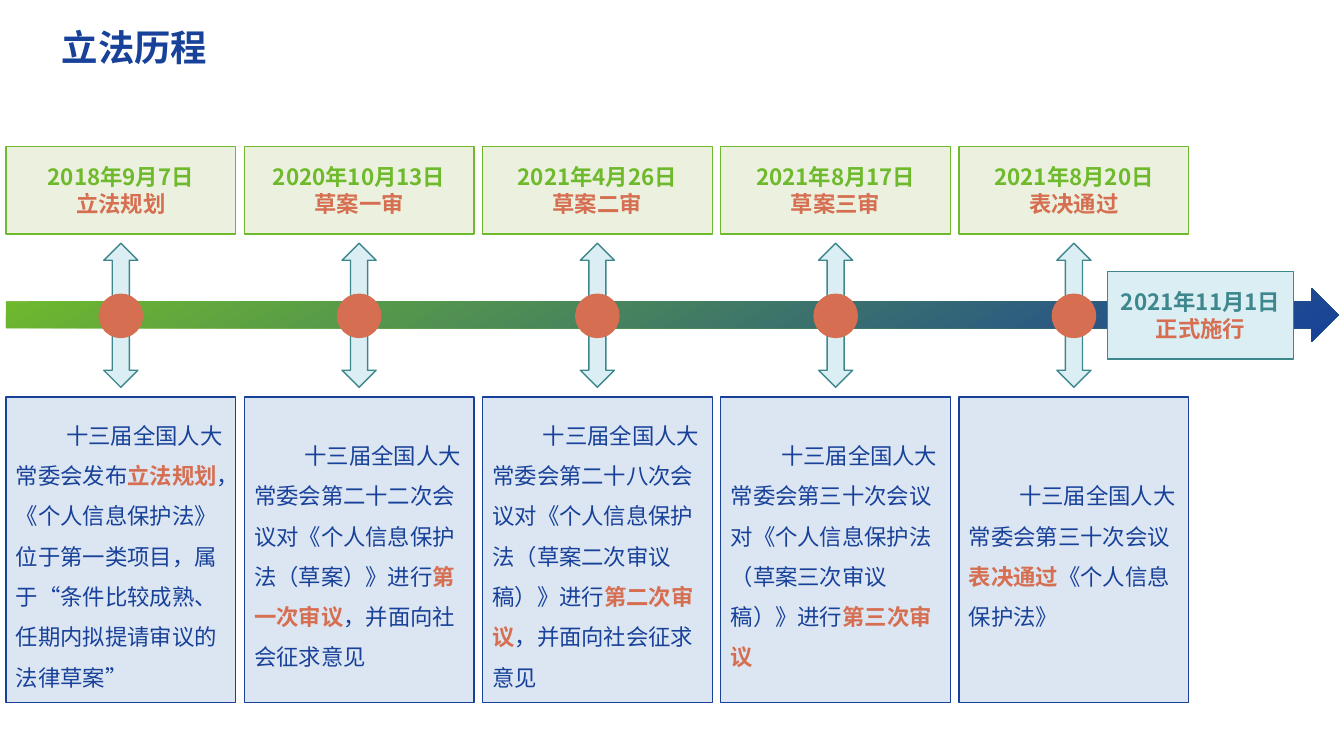
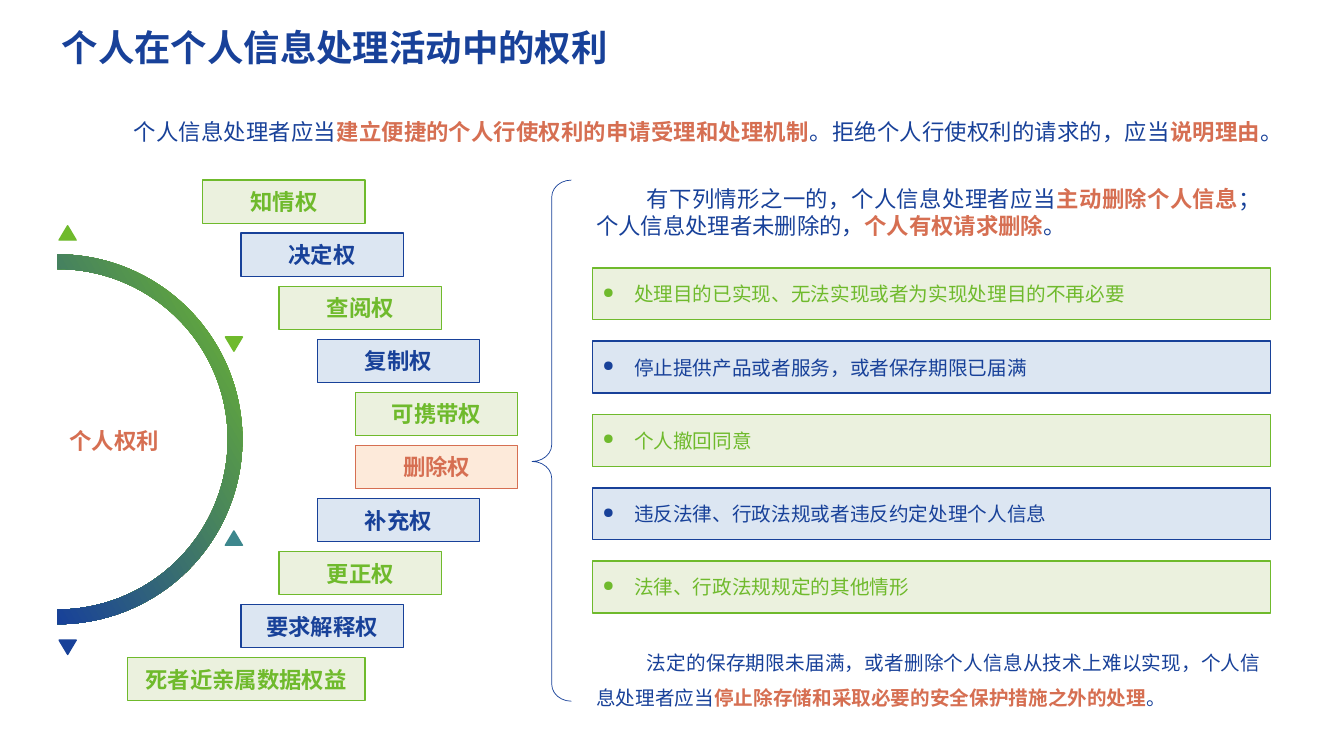
from lxml import etree
from pptx import Presentation
from pptx.dml.color import RGBColor
from pptx.enum.shapes import MSO_SHAPE
from pptx.enum.text import MSO_ANCHOR, MSO_AUTO_SIZE, PP_ALIGN
from pptx.oxml.ns import qn
from pptx.util import Cm, Pt

FONT = "Noto Sans CJK SC"
BLUE = RGBColor(0x18, 0x41, 0x99)
GREEN = RGBColor(0x6F, 0xBA, 0x2C)
TEAL = RGBColor(0x3D, 0x87, 0x8D)
ORANGE = RGBColor(0xD6, 0x6F, 0x52)
PALE = {
    BLUE: RGBColor(0xDC, 0xE6, 0xF2),
    GREEN: RGBColor(0xEB, 0xF1, 0xDE),
    TEAL: RGBColor(0xDB, 0xEE, 0xF4),
    ORANGE: RGBColor(0xFD, 0xEA, 0xDA),
}
FIRST_LINE = Cm(1.27)
BULLET_GAP = Cm(0.79)
DEGREE = 60000

MILESTONES = [
    ("2018年9月7日", "立法规划",
     "十三届全国人大常委会发布*立法规划*，《个人信息保护法》位于第一类项目，"
     "属于“条件比较成熟、任期内拟提请审议的法律草案”"),
    ("2020年10月13日", "草案一审",
     "十三届全国人大常委会第二十二次会议对《个人信息保护法（草案）》进行"
     "*第一次审议*，并面向社会征求意见"),
    ("2021年4月26日", "草案二审",
     "十三届全国人大常委会第二十八次会议对《个人信息保护法（草案二次审议稿）》进行"
     "*第二次审议*，并面向社会征求意见"),
    ("2021年8月17日", "草案三审",
     "十三届全国人大常委会第三十次会议对《个人信息保护法（草案三次审议稿）》进行"
     "*第三次审议*"),
    ("2021年8月20日", "表决通过",
     "十三届全国人大常委会第三十次会议*表决通过*《个人信息保护法》"),
]
RIGHTS = ["知情权", "决定权", "查阅权", "复制权", "可携带权",
          "删除权", "补充权", "更正权", "要求解释权", "死者近亲属数据权益"]
DELETION_CASES = [
    "处理目的已实现、无法实现或者为实现处理目的不再必要",
    "停止提供产品或者服务，或者保存期限已届满",
    "个人撤回同意",
    "违反法律、行政法规或者违反约定处理个人信息",
    "法律、行政法规规定的其他情形",
]


def write(frame, text, size=16, color=BLUE, bold=False, align=PP_ALIGN.LEFT,
          spacing=1.0, indent=0, bullet=None, anchor=MSO_ANCHOR.TOP):
    """Fill a text frame; a line break starts a paragraph, *stars* mark emphasis."""
    frame.word_wrap = True
    frame.auto_size = MSO_AUTO_SIZE.NONE
    frame.vertical_anchor = anchor
    for number, line in enumerate(text.split("\n")):
        paragraph = frame.add_paragraph() if number else frame.paragraphs[0]
        properties = paragraph._p.get_or_add_pPr()
        properties.set("marL", str(max(0, -indent)))
        properties.set("indent", str(indent))
        properties.set("hangingPunct", "1")
        if bullet:
            etree.SubElement(properties, qn("a:buSzPct")).set("val", "75000")
            etree.SubElement(properties, qn("a:buChar")).set("char", bullet)
        paragraph.alignment = align
        paragraph.line_spacing = spacing
        for position, part in enumerate(line.split("*")):
            if not part:
                continue
            emphasis = position % 2 == 1
            run = paragraph.add_run()
            run.text = part
            run.font.size = Pt(size)
            run.font.name = FONT
            run.font.bold = bold or emphasis
            run.font.color.rgb = ORANGE if emphasis else color
            run_properties = run._r.get_or_add_rPr()
            run_properties.set("lang", "zh-CN")
            etree.SubElement(run_properties, qn("a:ea")).set("typeface", FONT)


def spread(first, last, count):
    """Equally spaced positions from first to last."""
    return [first + (last - first) * step / (count - 1) for step in range(count)]


def bend(segment, radius, start, sweep):
    """Turn a straight outline segment into a circular arc, angles in degrees."""
    arc = etree.Element(qn("a:arcTo"))
    for name, value in (("wR", Cm(radius)), ("hR", Cm(radius)),
                        ("stAng", start * DEGREE), ("swAng", sweep * DEGREE)):
        arc.set(name, str(int(value)))
    segment.getparent().replace(segment, arc)


class Deck:
    """Shared style and the current slide; places and sizes are in centimetres."""

    def __init__(self):
        self.presentation = Presentation()
        self.presentation.slide_width = Cm(33.87)
        self.presentation.slide_height = Cm(19.05)
        self.slide = None

    def new_slide(self, heading):
        self.slide = self.presentation.slides.add_slide(self.presentation.slide_layouts[5])
        title = self.slide.shapes.title
        title.left, title.top, title.width, title.height = Cm(1.3), Cm(0.66), Cm(21.59), Cm(1.19)
        write(title.text_frame, heading, size=26, bold=True, spacing=0.9,
              anchor=MSO_ANCHOR.MIDDLE)

    def shape(self, kind, left, top, width, height, fill=None, line=None, weight=1):
        shape = self.slide.shapes.add_shape(kind, Cm(left), Cm(top), Cm(width), Cm(height))
        return self.paint(shape, fill, line, weight)

    def paint(self, shape, fill=None, line=None, weight=1):
        shape.shadow.inherit = False
        if fill is None:
            shape.fill.background()
        else:
            shape.fill.solid()
            shape.fill.fore_color.rgb = fill
        if line is None:
            shape.line.fill.background()
        else:
            shape.line.color.rgb = line
            shape.line.width = Pt(weight)
        return shape

    def green_to_blue(self, shape, angle):
        shape.fill.gradient()
        shape.fill.gradient_angle = angle
        for position, (stop, color) in enumerate(zip(shape.fill.gradient_stops, (GREEN, BLUE))):
            stop.color.rgb = color
            stop.position = position

    def card(self, left, top, width, height, text, color, **text_format):
        """Pale rectangle with an outline and text in its main colour."""
        box = self.shape(MSO_SHAPE.RECTANGLE, left, top, width, height, PALE[color], color)
        write(box.text_frame, text, color=color, anchor=MSO_ANCHOR.MIDDLE, **text_format)

    def label(self, left, top, width, height, text, color):
        self.card(left, top, width, height, text, color, bold=True, align=PP_ALIGN.CENTER)

    def note(self, left, top, width, height, text, **text_format):
        box = self.slide.shapes.add_textbox(Cm(left), Cm(top), Cm(width), Cm(height))
        write(box.text_frame, text, **text_format)

    def half_ring(self, center_x, center_y, outer, inner):
        """Right half of a ring: straight corners first, then two sides bent to arcs."""
        corners = [(0, -outer), (outer, 0), (0, outer), (0, inner), (0, -inner)]
        points = [(Cm(center_x + x), Cm(center_y + y)) for x, y in corners]
        builder = self.slide.shapes.build_freeform(*points[0])
        builder.add_line_segments(points[1:], close=True)
        ring = self.paint(builder.convert_to_shape())
        to_side, outer_side, _, inner_side = list(ring._element.iter(qn("a:lnTo")))[:4]
        to_side.getparent().remove(to_side)
        bend(outer_side, outer, 270, 180)
        bend(inner_side, inner, 90, -180)
        self.green_to_blue(ring, 210)

    def save(self):
        self.presentation.save("out.pptx")


def build_history(deck):
    deck.new_slide("立法历程")
    margin, width, axis, dot = 0.15, 5.79, 7.96, 1.09
    lefts = spread(margin, 24.17, len(MILESTONES))
    for left, (date, stage, detail) in zip(lefts, MILESTONES):
        deck.shape(MSO_SHAPE.UP_DOWN_ARROW, left + (width - 0.86) / 2, 6.13, 0.86, 3.63,
                   PALE[TEAL], TEAL)
        deck.label(left, 3.69, width, 2.21, f"{date}\n*{stage}*", GREEN)
        deck.card(left, 10, width, 7.7, detail, BLUE, spacing=1.5, indent=FIRST_LINE)
    timeline = deck.shape(MSO_SHAPE.RIGHT_ARROW, margin, 7.26, 33.58, 1.35)
    deck.green_to_blue(timeline, 300)
    for left in lefts:
        deck.shape(MSO_SHAPE.OVAL, left + (width - dot) / 2, axis - dot / 2, dot, dot,
                   ORANGE, ORANGE)
    deck.label(27.91, 6.84, 4.69, 2.21, "2021年11月1日\n*正式施行*", TEAL)


def build_rights(deck):
    deck.new_slide("个人在个人信息处理活动中的权利")
    last = len(RIGHTS) - 1
    right_edges = spread(9.2, 13.05, 5)
    for row, (right, top) in enumerate(zip(RIGHTS, spread(4.54, 16.57, len(RIGHTS)))):
        width = 5.99 if row == last else 4.09
        step = min(row, last - row)
        color = ORANGE if right == "删除权" else (GREEN, BLUE)[step % 2]
        deck.label(right_edges[step] - width, top, width, 1.09, right, color)

    deck.half_ring(1.45, 11.07, 4.66, 4.29)
    for left, top, rotation, color in [(1.49, 5.69, 0, GREEN), (5.68, 8.49, 180, GREEN),
                                       (5.68, 13.38, 0, TEAL), (1.49, 16.13, 180, BLUE)]:
        marker = deck.shape(MSO_SHAPE.ISOSCELES_TRIANGLE, left, top, 0.43, 0.36, color, color)
        marker.rotation = rotation
    deck.note(1.47, 10.64, 2.82, 0.94, "*个人权利*", align=PP_ALIGN.CENTER)

    brace = deck.shape(MSO_SHAPE.LEFT_BRACE, 13.41, 4.54, 0.99, 13.13, line=BLUE, weight=0.5)
    brace.adjustments[0], brace.adjustments[1] = 0.43, 0.54
    prose = {"align": PP_ALIGN.JUSTIFY, "indent": FIRST_LINE}
    deck.note(14.78, 4.55, 17.25, 1.68,
              "有下列情形之一的，个人信息处理者应当*主动删除个人信息*；"
              "个人信息处理者未删除的，*个人有权请求删除*。", **prose)
    case_tops = spread(6.75, 14.14, len(DELETION_CASES))
    for row, (case, top) in enumerate(zip(DELETION_CASES, case_tops)):
        deck.card(14.94, top, 17.08, 1.31, case, (GREEN, BLUE)[row % 2],
                  size=14, indent=-BULLET_GAP, bullet="●")
    deck.note(14.78, 15.98, 17.25, 1.68,
              "法定的保存期限未届满，或者删除个人信息从技术上难以实现，个人信息处理者应当"
              "*停止除存储和采取必要的安全保护措施之外的处理*。", size=14, spacing=1.5, **prose)
    deck.note(1.85, 2.51, 30.16, 1.37,
              "个人信息处理者应当*建立便捷的个人行使权利的申请受理和处理机制*。"
              "拒绝个人行使权利的请求的，应当*说明理由*。", spacing=1.5, **prose)


def main():
    deck = Deck()
    build_history(deck)
    build_rights(deck)
    deck.save()


if __name__ == "__main__":
    main()
